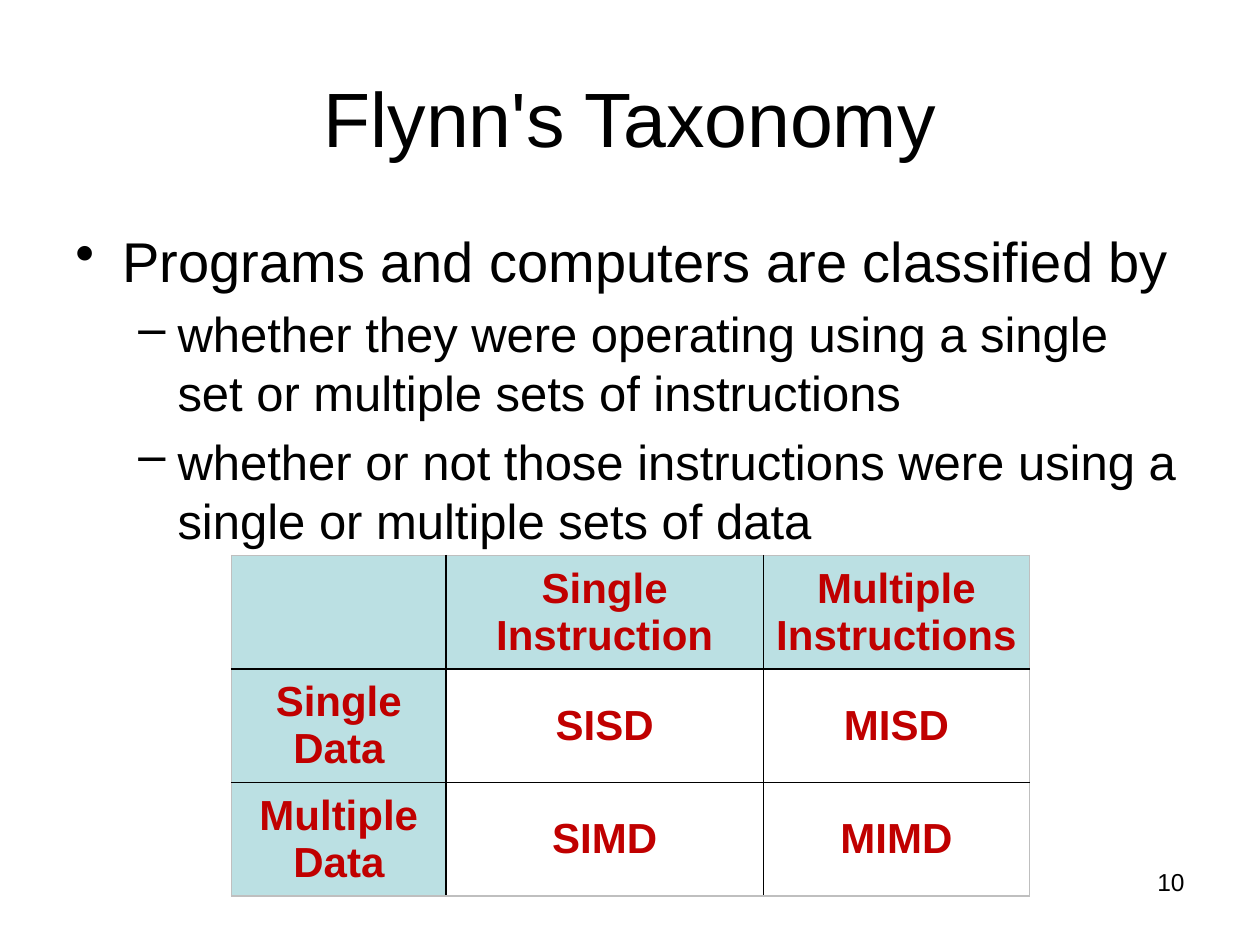
import pptx
import pptx.dml.color
import pptx.enum.text
import pptx.oxml
import pptx.oxml.ns
import pptx.util
from dataclasses import dataclass

Cm, Pt = pptx.util.Cm, pptx.util.Pt
RGB = pptx.dml.color.RGBColor.from_string
ALIGN = pptx.enum.text.PP_ALIGN
ANCHOR = pptx.enum.text.MSO_ANCHOR


@dataclass(frozen=True)
class Theme:
    font: str = "Arial"
    text: str = "000000"
    accent: str = "C00000"
    header: str = "BBE0E3"
    paper: str = "FFFFFF"
    edge: str = "BFBFBF"
    title: int = 44
    levels: tuple = (32, 28)
    cell: int = 24
    number: int = 14


# Bullet, left margin and hanging indent in cm for each outline level
BULLETS = (("•", 0.95, 0.95), ("–", 2.06, 0.79))

POINTS = [
    (0, "Programs and computers are classified by"),
    (1, "whether they were operating using a single set or multiple sets of instructions"),
    (1, "whether or not those instructions were using a single or multiple sets of data"),
]

TAXONOMY = [
    ["", "Single\vInstruction", "Multiple Instructions"],
    ["Single\vData", "SISD", "MISD"],
    ["Multiple\vData", "SIMD", "MIMD"],
]


class SlideBuilder:
    def __init__(self, prs, theme):
        self.theme = theme
        self.s = prs.slides.add_slide(prs.slide_layouts[5])

    def set_text(self, p, text, size, color=None, bold=False, align=ALIGN.LEFT):
        p.text = text
        p.alignment = align
        style = {"name": self.theme.font, "size": Pt(size), "bold": bold}
        for r in p.runs:
            for key, value in style.items():
                setattr(r.font, key, value)
            r.font.color.rgb = RGB(color or self.theme.text)

    def title(self, text, box):
        sp = self.s.shapes.title
        for key, value in zip(("left", "top", "width", "height"), box):
            setattr(sp, key, Cm(value))
        tf = sp.text_frame
        tf.word_wrap = True
        tf.vertical_anchor = ANCHOR.MIDDLE
        self.set_text(tf.paragraphs[0], text, self.theme.title, align=ALIGN.CENTER)

    def text_box(self, box):
        tf = self.s.shapes.add_textbox(*map(Cm, box)).text_frame
        tf.word_wrap = True
        return tf

    def bullets(self, points, box):
        tf = self.text_box(box)
        for i, (level, text) in enumerate(points):
            p = tf.add_paragraph() if i else tf.paragraphs[0]
            size = self.theme.levels[level]
            self.set_text(p, text, size)
            p.level = level
            p.space_before = Pt(0.2 * size)
            char, margin, hang = BULLETS[level]
            pPr = p._p.get_or_add_pPr()
            pPr.set("marL", str(Cm(margin)))
            pPr.set("indent", str(-Cm(hang)))
            pPr.append(pptx.oxml.parse_xml(
                f'<a:buChar {pptx.oxml.ns.nsdecls("a")} char="{char}"/>'))

    def number(self, text, box):
        p = self.text_box(box).paragraphs[0]
        self.set_text(p, text, self.theme.number, align=ALIGN.RIGHT)

    def border(self, cell, side, color):
        cell._tc.get_or_add_tcPr().append(pptx.oxml.parse_xml(
            f'<a:ln{side} {pptx.oxml.ns.nsdecls("a")} w="{Pt(1)}">'
            f'<a:solidFill><a:srgbClr val="{color}"/></a:solidFill></a:ln{side}>'))

    def table(self, rows, left, top, widths, row_height):
        """Draw a grid with shaded first row and column, and a lighter outer edge."""
        n, m = len(rows), len(widths)
        box = (left, top, sum(widths), n * row_height)
        tbl = self.s.shapes.add_table(n, m, *map(Cm, box)).table
        tbl.horz_banding = False
        for col, width in zip(tbl.columns, widths):
            col.width = Cm(width)
        for i, row in enumerate(rows):
            for j, text in enumerate(row):
                cell = tbl.cell(i, j)
                cell.vertical_anchor = ANCHOR.MIDDLE
                self.set_text(cell.text_frame.paragraphs[0], text, self.theme.cell,
                              self.theme.accent, True, ALIGN.CENTER)
                outer = {"L": j == 0, "R": j == m - 1, "T": i == 0, "B": i == n - 1}
                for side, is_edge in outer.items():
                    self.border(cell, side, self.theme.edge if is_edge else self.theme.text)
                cell.fill.solid()
                shaded = i == 0 or j == 0
                cell.fill.fore_color.rgb = RGB(self.theme.header if shaded else self.theme.paper)


def main():
    prs = pptx.Presentation()
    prs.slide_width, prs.slide_height = Cm(25.4), Cm(19.05)
    slide = SlideBuilder(prs, Theme())
    slide.title("Flynn's Taxonomy", (1.27, 0.76, 22.86, 3.18))
    slide.bullets(POINTS, (1.27, 4.45, 22.86, 6.27))
    slide.table(TAXONOMY, 4.67, 11.2, (4.32, 6.4, 5.36), 2.14)
    slide.number("10", (18.2, 17.35, 5.93, 1.32))
    prs.save("out.pptx")


if __name__ == "__main__":
    main()
